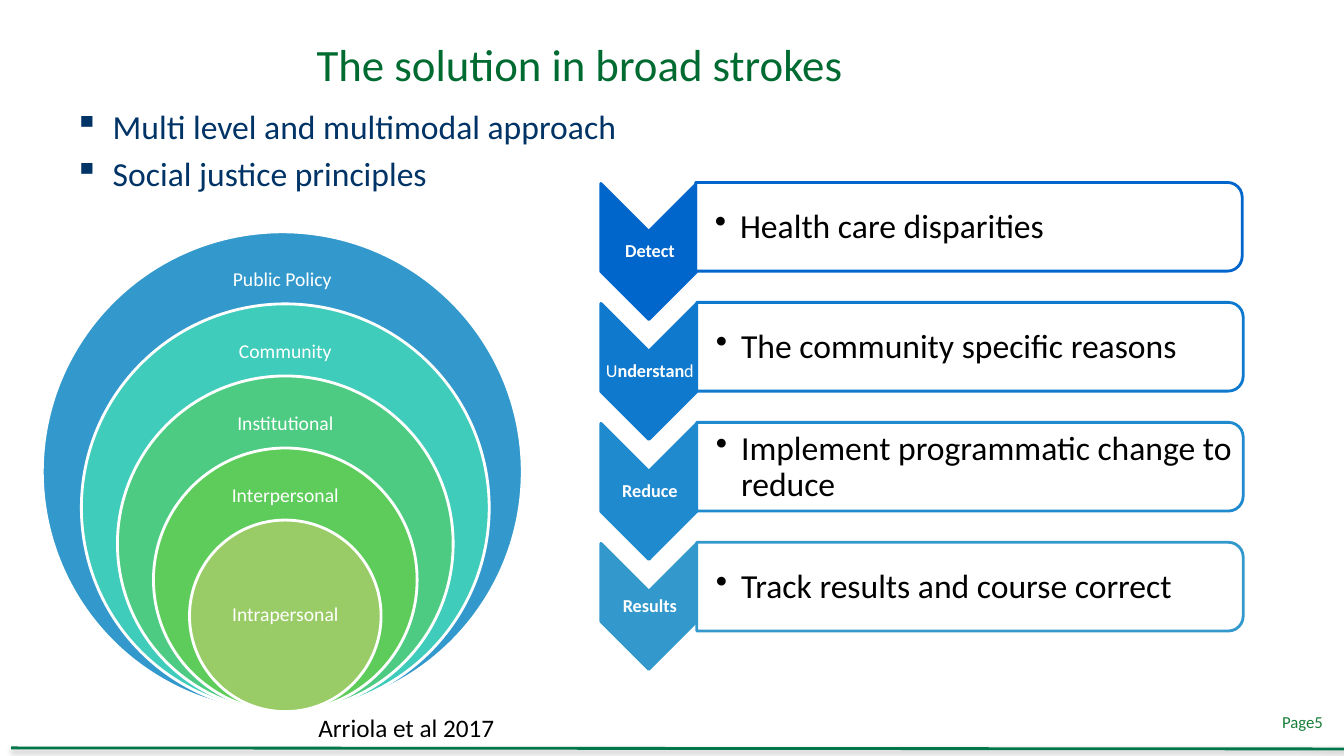
from dataclasses import dataclass

from lxml.etree import SubElement
from pptx import Presentation
from pptx.dml.color import RGBColor
from pptx.enum.shapes import MSO_CONNECTOR, MSO_SHAPE
from pptx.enum.text import MSO_ANCHOR, PP_ALIGN
from pptx.oxml.ns import qn
from pptx.util import Inches, Pt


@dataclass(frozen=True)
class Theme:
    """Colours and type sizes of the slide."""
    font: str = "Calibri"
    title: str = "006B31"
    body: str = "003366"
    page: str = "177D38"
    rule: str = "00764B"
    white: str = "FFFFFF"
    black: str = "000000"
    rings: tuple = ("3399CC", "40CCBA", "4DCB82", "5ECC5A", "99CC66")
    steps: tuple = ("0066CC", "0F79CE", "208ACE", "3399CC")
    title_size: int = 32
    body_size: int = 24
    source_size: int = 18
    ring_size: int = 14
    step_size: int = 13
    page_size: int = 12
    line_width: int = 2


class SlideBuilder:
    """Draws styled elements on the current slide."""

    def __init__(self, page, theme):
        self.page = page
        self.theme = theme

    def text(self, place, paragraphs, size, color, align=PP_ALIGN.LEFT, middle=False,
             insets=(0.1, 0.05, 0.1, 0.05), bullet=None, indent=0, level=0,
             spacing=None, before=0):
        """Add a text box; each paragraph is a list of (words, bold) runs."""
        box = self.page.shapes.add_textbox(*map(Inches, place))
        frame = box.text_frame
        frame.word_wrap = True
        frame.vertical_anchor = MSO_ANCHOR.MIDDLE if middle else MSO_ANCHOR.TOP
        (frame.margin_left, frame.margin_top,
         frame.margin_right, frame.margin_bottom) = map(Inches, insets)
        for number, runs in enumerate(paragraphs):
            para = frame.add_paragraph() if number else frame.paragraphs[0]
            para.alignment = align
            para.level = level
            if spacing:
                para.line_spacing = spacing
            if number and before:
                para.space_before = Pt(before)
            if bullet:
                properties = para._p.get_or_add_pPr()
                properties.set("marL", str(Inches(indent)))
                properties.set("indent", str(-Inches(indent)))
                SubElement(properties, qn("a:buChar"), char=bullet)
            for words, bold in runs:
                span = para.add_run()
                span.text = words
                span.font.name = self.theme.font
                span.font.size = Pt(size)
                span.font.bold = bold
                span.font.color.rgb = RGBColor.from_string(color)

    def shape(self, kind, place, fill, line, rotation=0, opacity=None):
        """Add a filled and outlined preset shape."""
        shape = self.page.shapes.add_shape(kind, *map(Inches, place))
        shape.shadow.inherit = False
        shape.rotation = rotation
        shape.fill.solid()
        shape.fill.fore_color.rgb = RGBColor.from_string(fill)
        shape.line.color.rgb = RGBColor.from_string(line)
        shape.line.width = Pt(self.theme.line_width)
        if opacity:
            color = shape._element.spPr.find(qn("a:solidFill")).find(qn("a:srgbClr"))
            SubElement(color, qn("a:alpha"), val=str(opacity * 1000))

    def turned(self, kind, left, top, width, height, fill, line, opacity=None):
        """Add a shape turned a quarter clockwise that covers the given area."""
        shift = (width - height) / 2
        place = (left + shift, top - shift, height, width)
        self.shape(kind, place, fill, line, 90, opacity)

    def rule(self, start, end):
        """Add the footer line with its soft shadow."""
        line = self.page.shapes.add_connector(
            MSO_CONNECTOR.STRAIGHT, *map(Inches, start + end))
        line.line.color.rgb = RGBColor.from_string(self.theme.rule)
        line.line.width = Pt(self.theme.line_width)
        effects = SubElement(line._element.spPr, qn("a:effectLst"))
        shadow = SubElement(effects, qn("a:outerShdw"), blurRad=str(Pt(3.1)),
                            dist=str(Pt(1.6)), dir="5400000", rotWithShape="0")
        color = SubElement(shadow, qn("a:srgbClr"), val=self.theme.black)
        SubElement(color, qn("a:alpha"), val="38000")

    def ring(self, center, bottom, diameter, fill, label, label_place):
        """Add one nested circle and its label."""
        place = (center - diameter / 2, bottom - diameter, diameter, diameter)
        self.shape(MSO_SHAPE.OVAL, place, fill, self.theme.white)
        self.text(label_place, [[(label, False)]], self.theme.ring_size, self.theme.white,
                  PP_ALIGN.CENTER, True, (0.11,) * 4, spacing=0.9)

    def step(self, top, height, card_left, color, label, detail):
        """Add one chevron with its label and the card beside it."""
        left, width, card_width, card_height = 5.96, 0.95, 5.42, 0.88
        self.turned(MSO_SHAPE.CHEVRON, left, top, width, height, color, color)
        self.text((left + 0.01, top + 0.47, width, height - 0.94), [label],
                  self.theme.step_size, self.theme.white, PP_ALIGN.CENTER, True,
                  (0.01,) * 4, spacing=0.9)
        self.turned(MSO_SHAPE.ROUND_2_SAME_RECTANGLE, card_left, top - 0.01, card_width,
                    card_height, self.theme.white, color, 90)
        self.text((card_left, top + 0.04, 5.38, 0.79), [[(detail, False)]],
                  self.theme.body_size, self.theme.black, middle=True,
                  insets=(0.19, 0.02, 0.02, 0.02), bullet="•", indent=0.25, level=1,
                  spacing=0.9)


def main():
    """Build and save the slide."""
    theme = Theme()
    deck = Presentation()
    deck.slide_width, deck.slide_height = Inches(13.33), Inches(7.5)
    builder = SlideBuilder(deck.slides.add_slide(deck.slide_layouts[6]), theme)

    builder.text((12.47, 7.01, 0.75, 0.4), [[("Page5", False)]], theme.page_size,
                 theme.page, PP_ALIGN.RIGHT)
    builder.rule((0.11, 7.42), (13.36, 7.43))
    principles = ("Multi level and multimodal approach", "Social justice principles")
    builder.text((0.64, 1, 10.34, 1.1), [[(line, False)] for line in principles],
                 theme.body_size, theme.body, bullet="▪", indent=0.38, before=4.8)
    builder.text((0, 0.08, 11.5, 1.1), [[("The solution in broad strokes", False)]],
                 theme.title_size, theme.title, PP_ALIGN.CENTER, True)

    rings = (
        ("Public Policy", 2.8, 1.78, 0.24, 0.48),
        ("Community", 2.83, 1.74, 0.24, 0.47),
        ("Institutional", 2.83, 1.72, 0.24, 0.47),
        ("Interpersonal", 2.83, 1.41, 0.24, 0.47),
        ("Intrapersonal", 2.83, 1.35, 0.47, 0.95),
    )
    bottom = 7.06
    for number, (label, center, width, drop, height) in enumerate(rings):
        diameter = 4.76 - 0.715 * number
        label_place = (center - width / 2, bottom - diameter + drop, width, height)
        builder.ring(center, bottom, diameter, theme.rings[number], label, label_place)

    steps = (
        ([("Detect", True)], "Health care disparities", 1.35, 6.9),
        ([("U", False), ("nderstan", True), ("d", False)],
         "The community specific reasons", 1.35, 6.91),
        ([("Reduce", True)], "Implement programmatic change to reduce", 1.35, 6.91),
        ([("Results", True)], "Track results and course correct", 1.25, 6.91),
    )
    for number, (label, detail, height, card_left) in enumerate(steps):
        builder.step(1.82 + 1.19 * number, height, card_left, theme.steps[number],
                     label, detail)

    builder.text((3.06, 7.02, 3.4, 0.4), [[("Arriola et al 2017", False)]],
                 theme.source_size, theme.black)
    deck.save("out.pptx")


if __name__ == "__main__":
    main()
